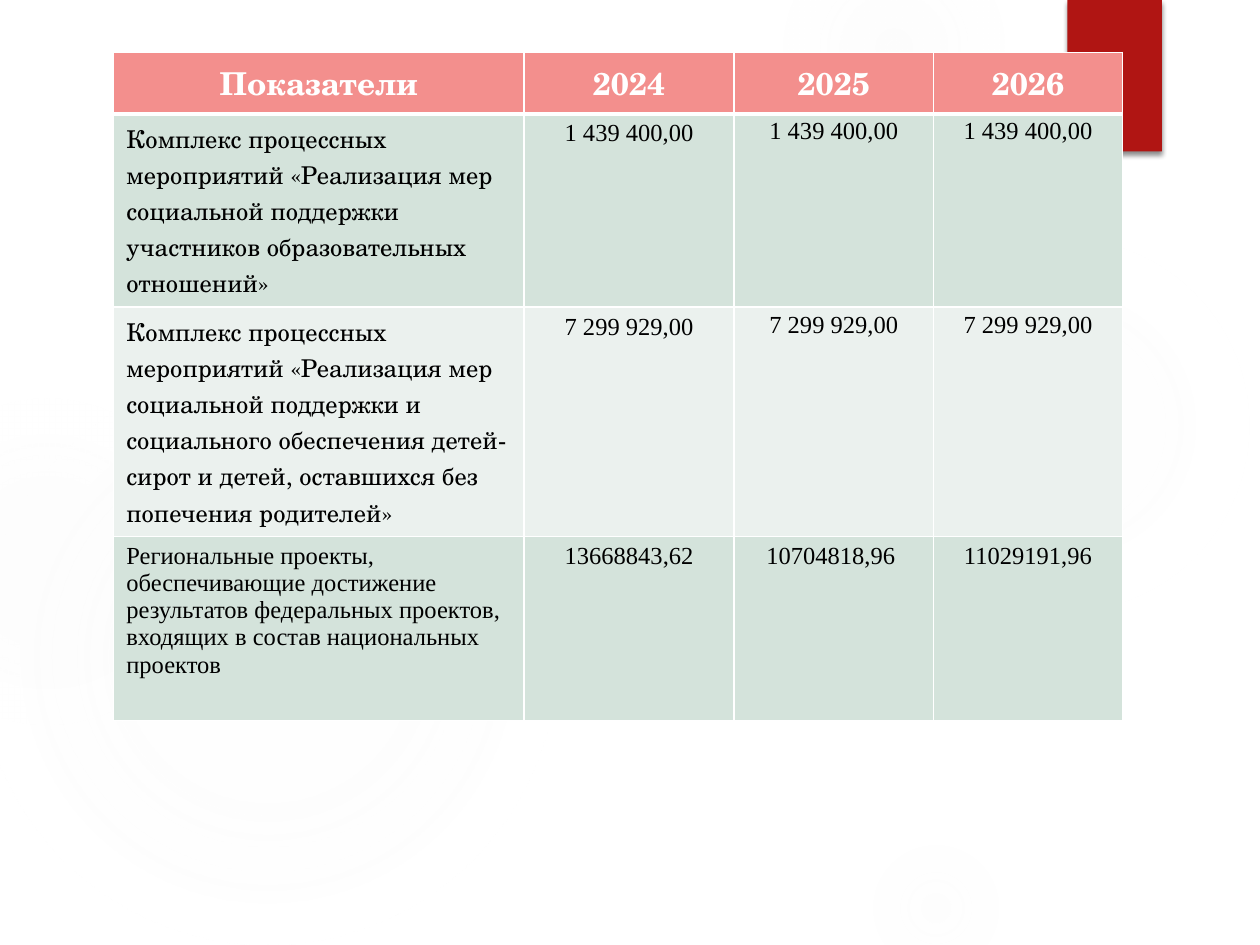
from pptx import Presentation
from pptx.util import Pt
from pptx.dml.color import RGBColor as Rgb
from pptx.enum.shapes import MSO_SHAPE as Kind
from pptx.enum.text import PP_ALIGN as Align
from pptx.oxml import parse_xml as parse
from pptx.oxml.ns import nsdecls as space, qn

WHITE = Rgb(0xFF, 0xFF, 0xFF)
BLACK = Rgb(0, 0, 0)
MIST = Rgb(0xF3, 0xF3, 0xF3)
RED = Rgb(0xB0, 0x15, 0x13)
CORAL = Rgb(0xF3, 0x8F, 0x8D)
SAGE = Rgb(0xD4, 0xE3, 0xDB)
PALE = Rgb(0xEB, 0xF1, 0xEE)
SERIF, ROMAN = "TeX Gyre Schola", "Times New Roman"

GLOWS = [
    (496, 132, 222, (7, 6), 69),
    (448, -36, 126, (14, 7), 73),
    (496, 480, 78, (9, 5), 66),
    (-12, 210, 330, (11, 10), 75),
    (-66, 228, 186, (8, 8), 72),
]
COLS = [234.5, 120, 114, 108]
ROWS = [34, 110.5, 131, 105]
HEAD = ["Показатели", "2024", "2025", "2026"]
BODY = [
    ["Комплекс процессных мероприятий «Реализация мер социальной поддержки "
     "участников образовательных отношений»"] + ["1 439 400,00"] * 3,
    ["Комплекс процессных мероприятий «Реализация мер социальной поддержки и "
     "социального обеспечения детей-сирот и детей, оставшихся без попечения "
     "родителей»"] + ["7 299 929,00"] * 3,
    ["Региональные проекты, обеспечивающие достижение результатов федеральных "
     "проектов, входящих в состав национальных проектов",
     "13668843,62", "10704818,96 ", "11029191,96"],
]


def add_plain(slide, kind, box):
    """Add a shape with no line and no shadow."""
    shape = slide.shapes.add_shape(kind, *map(Pt, box))
    shape.shadow.inherit = False
    shape.line.fill.background()
    return shape


def add_glow(slide, left, top, size, alphas, edge):
    """Add a soft round glow that fades out at the edge percentage."""
    shape = add_plain(slide, Kind.OVAL, (left, top, size, size))
    shape.fill.gradient()
    stops = "".join(
        f'<a:gs pos="{pos * 1000}"><a:srgbClr val="{MIST}">'
        f'<a:alpha val="{alpha * 1000}"/></a:srgbClr></a:gs>'
        for pos, alpha in zip((0, 36, edge), (*alphas, 0)))
    fade = parse(
        f'<a:gradFill {space("a")} rotWithShape="1"><a:gsLst>{stops}</a:gsLst>'
        '<a:path path="circle"><a:fillToRect l="50000" t="50000" r="50000" '
        'b="50000"/></a:path></a:gradFill>')
    props = shape._element.spPr
    props.replace(props.find(qn("a:gradFill")), fade)


def add_flag(slide, box):
    """Add the red bookmark with its drop shadow."""
    shape = add_plain(slide, Kind.RECTANGLE, box)
    shape.fill.solid()
    shape.fill.fore_color.rgb = RED
    shape._element.spPr.find(qn("a:effectLst")).append(parse(
        f'<a:outerShdw {space("a")} blurRad="{Pt(3)}" dist="{Pt(2)}" '
        f'dir="5400000" rotWithShape="0"><a:srgbClr val="{BLACK}">'
        '<a:alpha val="45000"/></a:srgbClr></a:outerShdw>'))


def set_edges(cell, top, base):
    """Draw white cell borders with the given top and bottom widths."""
    props = cell._tc.get_or_add_tcPr()
    for side, width in zip("LRTB", (1, 1, top, base)):
        props.append(parse(
            f'<a:ln{side} {space("a")} w="{Pt(width)}"><a:solidFill>'
            f'<a:srgbClr val="{WHITE}"/></a:solidFill></a:ln{side}>'))


def fill_cell(cell, text, row, col):
    """Write and format one cell by its place in the table."""
    head = row == 0
    set_edges(cell, 3 if row == 1 else 1, 3 if head else 1)
    cell.fill.solid()
    cell.fill.fore_color.rgb = CORAL if head else (PALE, SAGE)[row % 2]
    cell.text = text
    para = cell.text_frame.paragraphs[0]
    para.alignment = Align.CENTER if head or col else Align.LEFT
    font = para.font
    font.name = SERIF if head or (col == 0 and row < 3) else ROMAN
    font.size = Pt(18 if head else 14)
    font.bold = head
    font.color.rgb = WHITE if head else BLACK
    if row in (1, 2) and col > 1:
        para.line_spacing = 1.15
        cell.margin_left = cell.margin_right = 0
        cell.margin_top = cell.margin_bottom = 0


def add_grid(slide, left, top):
    """Add the table of indicators by year."""
    box = (left, top, sum(COLS), sum(ROWS))
    grid = slide.shapes.add_table(len(ROWS), len(COLS), *map(Pt, box)).table
    for col, width in zip(grid.columns, COLS):
        col.width = Pt(width)
    for row, height in zip(grid.rows, ROWS):
        row.height = Pt(height)
    for row, texts in enumerate([HEAD, *BODY]):
        for col, text in enumerate(texts):
            fill_cell(grid.cell(row, col), text, row, col)


def main():
    """Build and save the slide."""
    deck = Presentation()
    deck.slide_width, deck.slide_height = Pt(720), Pt(540)
    slide = deck.slides.add_slide(deck.slide_layouts[6])
    for glow in GLOWS:
        add_glow(slide, *glow)
    add_flag(slide, (610, 0, 54, 86.5))
    add_grid(slide, 65, 30)
    deck.save("out.pptx")


if __name__ == "__main__":
    main()
